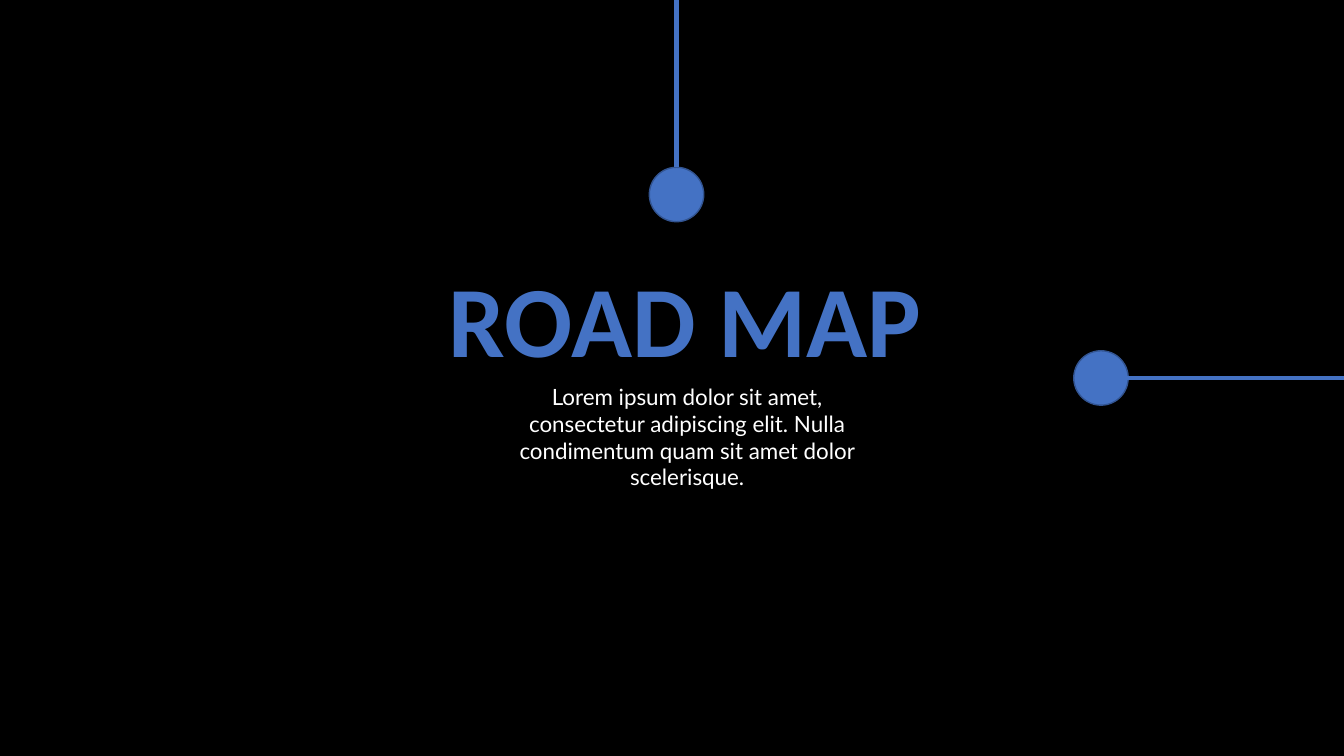
"""Build the road map title slide."""
from dataclasses import dataclass

from lxml import etree
from pptx import Presentation
from pptx import util as u
from pptx.dml.color import RGBColor
from pptx.enum import shapes, text
from pptx.oxml.ns import qn


@dataclass(frozen=True)
class Theme:
    """Colours, fonts and sizes used on the slide."""
    background: RGBColor = RGBColor.from_string("000000")
    accent: RGBColor = RGBColor.from_string("4472C4")
    outline: RGBColor = RGBColor.from_string("325491")
    body: RGBColor = RGBColor.from_string("FFFFFF")
    title_font: str = "Calibri"
    body_font: str = "Lato"
    title_size: int = 72
    body_size: int = 16
    outline_width: int = 1
    line_width: int = 3


THEME = Theme()
WIDTH, HEIGHT = 13.33, 7.5
DOT = 0.54


def add_text(page, place, words, font, size, color, bold=False, wrap=True, align=None):
    """Add a one-paragraph text box."""
    box = page.shapes.add_textbox(*map(u.Inches, place))
    frame = box.text_frame
    frame.word_wrap = wrap
    frame.auto_size = text.MSO_AUTO_SIZE.SHAPE_TO_FIT_TEXT
    para = frame.paragraphs[0]
    para.alignment = align
    span = para.add_run()
    span.text = words
    span.font.name = font
    span.font.size = u.Pt(size)
    span.font.bold = bold
    span.font.color.rgb = color


def add_dot(page, left, top):
    """Add a round road map marker."""
    dot = page.shapes.add_shape(
        shapes.MSO_SHAPE.OVAL, *map(u.Inches, (left, top, DOT, DOT)))
    dot.shadow.inherit = False
    dot.fill.solid()
    dot.fill.fore_color.rgb = THEME.accent
    dot.line.color.rgb = THEME.outline
    dot.line.width = u.Pt(THEME.outline_width)


def add_line(page, start, end):
    """Add a straight accent line between two points."""
    line = page.shapes.add_connector(
        shapes.MSO_CONNECTOR.STRAIGHT, *map(u.Inches, (*start, *end)))
    line.line.color.rgb = THEME.accent
    line.line.width = u.Pt(THEME.line_width)
    etree.SubElement(line._element.spPr, qn("a:effectLst"))


def main():
    """Build and save the slide."""
    deck = Presentation()
    deck.slide_width, deck.slide_height = u.Inches(WIDTH), u.Inches(HEIGHT)
    page = deck.slides.add_slide(deck.slide_layouts[6])
    page.background.fill.solid()
    page.background.fill.fore_color.rgb = THEME.background

    add_text(page, (4.35, 2.5, 4.94, 1.31), "ROAD MAP", THEME.title_font,
             THEME.title_size, THEME.accent, bold=True, wrap=False)
    add_text(page, (4.87, 3.75, 3.89, 1.18),
             "Lorem ipsum dolor sit amet, consectetur adipiscing elit. "
             "Nulla condimentum quam sit amet dolor scelerisque.",
             THEME.body_font, THEME.body_size, THEME.body,
             align=text.PP_ALIGN.CENTER)

    top_x, top_y = 6.71, 1.66
    add_dot(page, top_x - DOT / 2, top_y)
    add_line(page, (top_x, 0), (top_x, top_y))

    side_x, side_y = 10.65, HEIGHT / 2
    add_dot(page, side_x, side_y - DOT / 2)
    add_line(page, (WIDTH, side_y), (11.06, side_y))

    deck.save("out.pptx")


if __name__ == "__main__":
    main()
